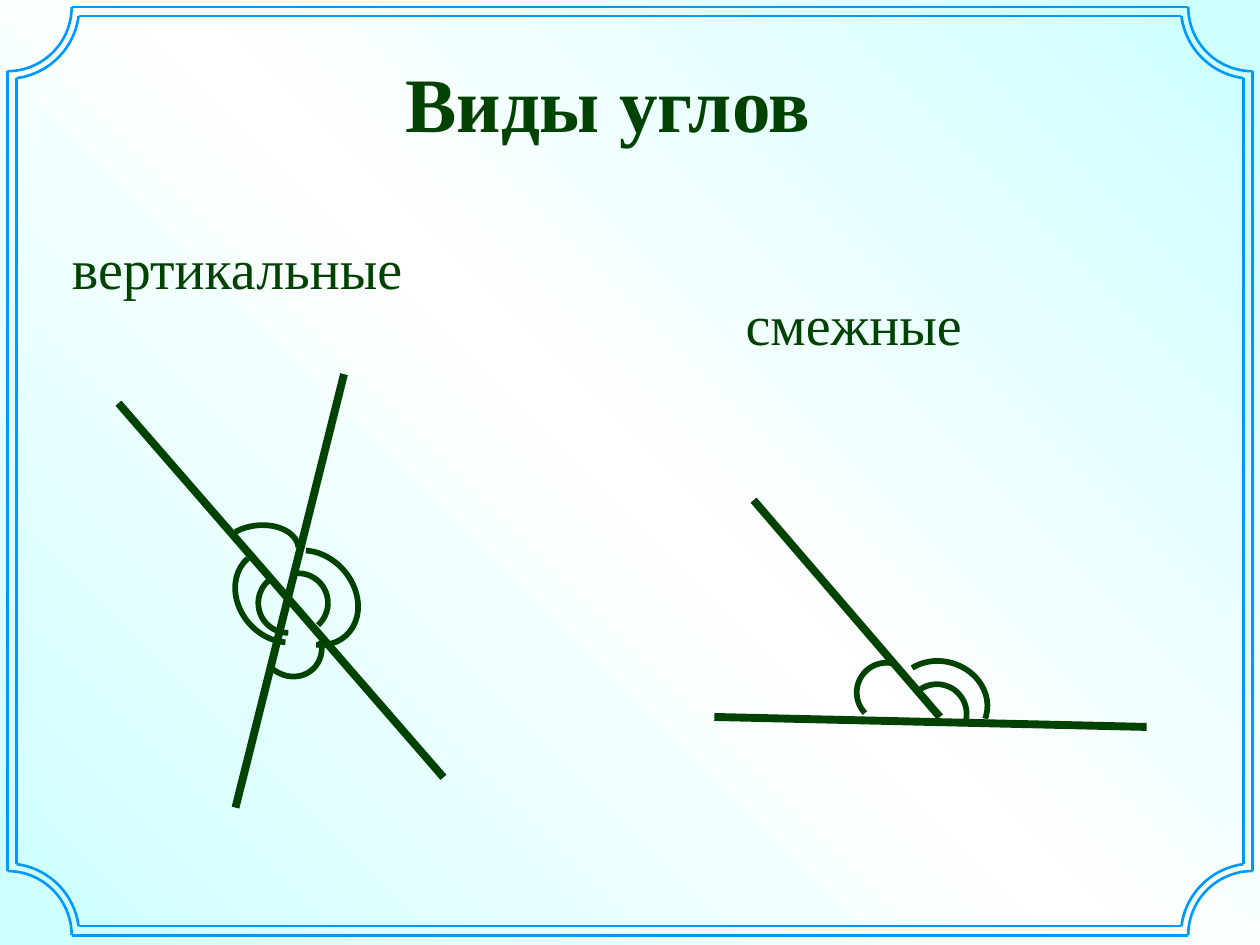
import copy
import math
from dataclasses import dataclass

from pptx import Presentation
from pptx.dml.color import RGBColor
from pptx.enum import shapes, text
from pptx.oxml.ns import qn
from pptx.util import Pt
from lxml import etree


@dataclass(frozen=True)
class Theme:
    ink: str = "004200"
    frame: str = "0099FF"
    gradient: tuple = ("CCFFFF", "FFFFFF", "CCFFFF")
    font: str = "Times New Roman"
    title_size: float = 44
    label_size: float = 32
    ray_width: float = 4.5
    arc_width: float = 3.25
    frame_width: float = 1.5


class SlideBuilder:
    def __init__(self, slide, theme):
        self.slide = slide
        self.theme = theme

    def background(self):
        fill = self.slide.background.fill
        fill.gradient()
        fill.gradient_angle = 45
        stop_list = next(self.slide.element.iter(qn("a:gsLst")))
        stop_list.insert(1, copy.deepcopy(stop_list[0]))
        for index, (stop, color) in enumerate(zip(stop_list, self.theme.gradient)):
            stop.set("pos", str(index * 50000))
            for child in list(stop):
                stop.remove(child)
            etree.SubElement(stop, qn("a:srgbClr")).set("val", color)

    def style_line(self, shape, color, width):
        shape.line.color.rgb = RGBColor.from_string(color)
        shape.line.width = Pt(width)

    def label(self, wording, left, top, width, height, size, bold=False):
        box = self.slide.shapes.add_textbox(Pt(left), Pt(top), Pt(width), Pt(height))
        frame = box.text_frame
        frame.word_wrap = True
        frame.auto_size = text.MSO_AUTO_SIZE.SHAPE_TO_FIT_TEXT
        paragraph = frame.paragraphs[0]
        paragraph.text = wording
        font = paragraph.font
        font.name, font.size, font.bold = self.theme.font, Pt(size), bold
        font.color.rgb = RGBColor.from_string(self.theme.ink)

    def line(self, x1, y1, x2, y2, color, width):
        connector = self.slide.shapes.add_connector(
            shapes.MSO_CONNECTOR.STRAIGHT, Pt(x1), Pt(y1), Pt(x2), Pt(y2))
        self.style_line(connector, color, width)
        etree.SubElement(connector.element.spPr, qn("a:effectLst"))

    def ray(self, *ends):
        self.line(*ends, self.theme.ink, self.theme.ray_width)

    def angle_arc(self, left, top, width, height, rotation, start=214.85, end=0):
        """Mark an angle; start and end are degrees clockwise from the right."""
        arc = self.slide.shapes.add_shape(
            shapes.MSO_SHAPE.ARC, Pt(left), Pt(top), Pt(width), Pt(height))
        arc.shadow.inherit = False
        arc.fill.background()
        arc.rotation = rotation
        # Arc angles are stored in 60000ths of a degree, adjustments in 100000ths
        arc.adjustments[0] = start * 0.6
        arc.adjustments[1] = end * 0.6
        self.style_line(arc, self.theme.ink, self.theme.arc_width)

    def corner_curve(self, center_x, center_y, radius, inset, toward_x, toward_y):
        """Draw a concave corner as a fine polyline ending on the inset edges."""
        first = math.asin(inset / radius)
        sweep = math.pi / 2 - 2 * first
        steps = 24
        points = []
        for step in range(steps + 1):
            angle = first + sweep * step / steps
            points.append((Pt(center_x + toward_x * radius * math.cos(angle)),
                           Pt(center_y + toward_y * radius * math.sin(angle))))
        builder = self.slide.shapes.build_freeform(*points[0])
        builder.add_line_segments(points[1:], close=False)
        curve = builder.convert_to_shape()
        curve.shadow.inherit = False
        curve.fill.background()
        self.style_line(curve, self.theme.frame, self.theme.frame_width)

    def frame(self, left, top, right, bottom, radius, inset):
        """Draw one outline; corner curves are centred on the given rectangle."""
        style = (self.theme.frame, self.theme.frame_width)
        reach = math.sqrt(radius ** 2 - inset ** 2)
        for y in (top + inset, bottom - inset):
            self.line(left + reach, y, right - reach, y, *style)
        for x in (left + inset, right - inset):
            self.line(x, top + reach, x, bottom - reach, *style)
        for x, toward_x in ((left, 1), (right, -1)):
            for y, toward_y in ((top, 1), (bottom, -1)):
                self.corner_curve(x, y, radius, inset, toward_x, toward_y)


def main():
    theme = Theme()
    presentation = Presentation()
    presentation.slide_width, presentation.slide_height = Pt(720), Pt(540)
    slide = presentation.slides.add_slide(presentation.slide_layouts[6])
    builder = SlideBuilder(slide, theme)
    builder.background()

    builder.label("Виды углов", 224.6, 28, 258.5, 82, theme.title_size, bold=True)
    builder.label("вертикальные", 34, 129.6, 242, 46, theme.label_size)
    builder.label("смежные", 419, 162, 196.5, 46, theme.label_size)

    vertical_rays = [(67.7, 230.4, 253.4, 444.2), (196.6, 213.8, 134.6, 461.5)]
    adjacent_rays = [(430.6, 285.8, 537.1, 409.7), (408.2, 409.7, 655.2, 415.4)]
    for ends in vertical_rays + adjacent_rays:
        builder.ray(*ends)

    mark = 34
    vertical_arcs = [
        (149, 317.5, 58.3, 48.2, 48.1, 214.85, 36.57),
        (147.6, 327.6, mark, mark, 234.6),
        (153.4, 327.6, mark, mark, 48.1),
        (125.3, 300.2, 45.4, 30.2, 353.5, 226.36),
        (149, 350, mark, 37.4, 136.2),
        (131.8, 316.8, 56.9, 47.5, 229),
    ]
    adjacent_arcs = [
        (510.5, 378, 54, 47.5, 16, 214.85, 3.44),
        (489.6, 378.7, mark, mark, 281.5),
        (518.4, 391, mark, mark, 15, 214.85, 359.95),
    ]
    for arc in vertical_arcs + adjacent_arcs:
        builder.angle_arc(*arc)

    for radius, inset in ((36.75, 0), (41, 5.25)):
        builder.frame(4.25, 4, 715.75, 534.5, radius, inset)

    presentation.save("out.pptx")


if __name__ == "__main__":
    main()
